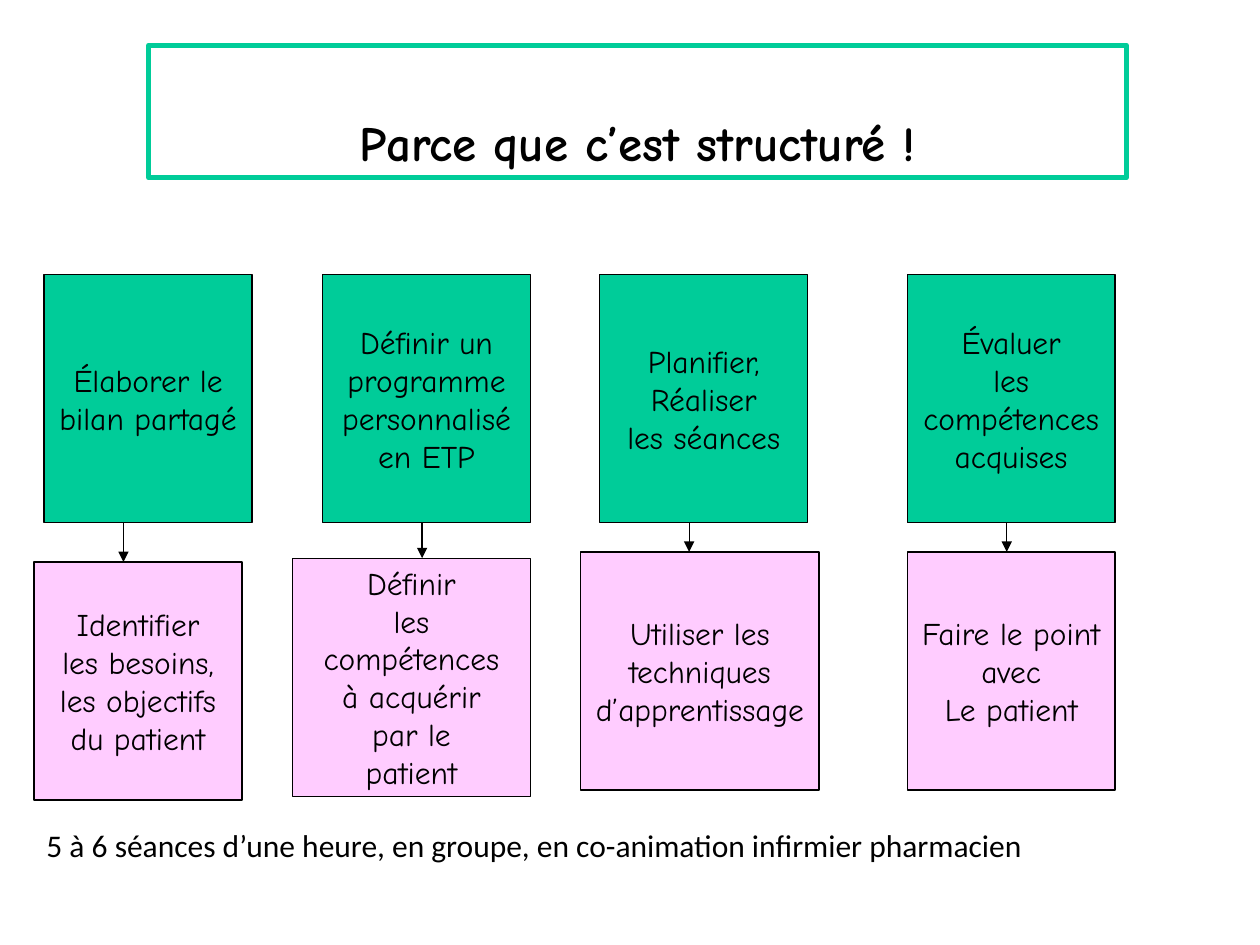
from pptx import Presentation
from pptx.dml.color import RGBColor
from pptx.enum.shapes import MSO_CONNECTOR, MSO_SHAPE
from pptx.enum.text import MSO_ANCHOR, PP_ALIGN
from pptx.oxml.ns import qn
from pptx.util import Inches, Pt
from lxml import etree

RECTANGLE = MSO_SHAPE.RECTANGLE
STRAIGHT = MSO_CONNECTOR.STRAIGHT
CENTER = PP_ALIGN.CENTER
MIDDLE = MSO_ANCHOR.MIDDLE
BOTTOM = MSO_ANCHOR.BOTTOM

BLACK = RGBColor(0x00, 0x00, 0x00)
GREEN = RGBColor(0x00, 0xCC, 0x99)
PINK = RGBColor(0xFF, 0xCC, 0xFF)

STEP_TOP, STEP_WIDTH, STEP_HEIGHT = 2.18, 1.65, 1.97
STEP_BOTTOM = STEP_TOP + STEP_HEIGHT
DETAIL_HEIGHT = 1.89

# step left, step lines, arrow x, detail (left, top, width), detail lines
STAGES = [
    (0.35, ["Élaborer le", "bilan partagé"], 0.98, (0.27, 4.46, 1.65),
     ["Identifier", "les besoins,", "les objectifs", "du patient"]),
    (2.56, ["Définir un", "programme", "personnalisé", "en ETP"], 3.35, (2.32, 4.43, 1.89),
     ["Définir", "les", "compétences", "à acquérir", "par le", "patient"]),
    (4.76, ["Planifier,", "Réaliser", "les séances"], 5.47, (4.61, 4.38, 1.89),
     ["Utiliser les", "techniques", "d’apprentissage"]),
    (7.2, ["Évaluer", "les", "compétences", "acquises"], 7.99, (7.2, 4.38, 1.65),
     ["Faire le point", "avec", "Le patient"]),
]


class SlideBuilder:
    heading_font = "Comic Neue"
    body_font = "Calibri"
    text_size = 18

    def __init__(self, slide):
        self.slide = slide

    def add_lines(self, frame, lines, font, size, bold=False, align=None):
        for index, line in enumerate(lines):
            paragraph = frame.paragraphs[0] if index == 0 else frame.add_paragraph()
            paragraph.alignment = align
            run = paragraph.add_run()
            run.text = line
            run.font.name = font
            run.font.size = Pt(size)
            run.font.bold = bold
            run.font.color.rgb = BLACK

    def box(self, left, top, width, height, lines, fill=None, outline=BLACK,
            weight=0.75, size=text_size, bold=False, anchor=MIDDLE, wrap=False):
        box = self.slide.shapes.add_shape(
            RECTANGLE, Inches(left), Inches(top), Inches(width), Inches(height))
        box.shadow.inherit = False
        if fill is None:
            box.fill.background()
        else:
            box.fill.solid()
            box.fill.fore_color.rgb = fill
        box.line.color.rgb = outline
        box.line.width = Pt(weight)
        frame = box.text_frame
        frame.word_wrap = wrap
        frame.vertical_anchor = anchor
        self.add_lines(frame, lines, self.heading_font, size, bold, CENTER)

    def down_arrow(self, x, top, bottom):
        arrow = self.slide.shapes.add_connector(
            STRAIGHT, Inches(x), Inches(top), Inches(x), Inches(bottom))
        arrow.line.color.rgb = BLACK
        arrow.line.width = Pt(0.75)
        properties = arrow._element.spPr
        etree.SubElement(properties.find(qn("a:ln")), qn("a:tailEnd"), type="triangle")
        etree.SubElement(properties, qn("a:effectLst"))

    def note(self, left, top, width, height, line):
        note = self.slide.shapes.add_textbox(
            Inches(left), Inches(top), Inches(width), Inches(height))
        note.text_frame.word_wrap = True
        self.add_lines(note.text_frame, [line], self.body_font, self.text_size)


def main():
    presentation = Presentation()
    presentation.slide_width = Inches(10)
    presentation.slide_height = Inches(7.5)
    builder = SlideBuilder(presentation.slides.add_slide(presentation.slide_layouts[6]))

    builder.box(1.18, 0.36, 7.76, 1.05, ["Parce que c’est structuré !"], outline=GREEN,
                weight=3, size=28, bold=True, anchor=BOTTOM, wrap=True)
    for step_left, step, arrow_x, (left, top, width), detail in STAGES:
        builder.box(step_left, STEP_TOP, STEP_WIDTH, STEP_HEIGHT, step, GREEN)
        builder.box(left, top, width, DETAIL_HEIGHT, detail, PINK)
        builder.down_arrow(arrow_x, STEP_BOTTOM, top)
    builder.note(0.27, 6.51, 9.29, 0.4,
                 "5 à 6 séances d’une heure, en groupe, en co-animation infirmier pharmacien")

    presentation.save("out.pptx")


if __name__ == "__main__":
    main()
